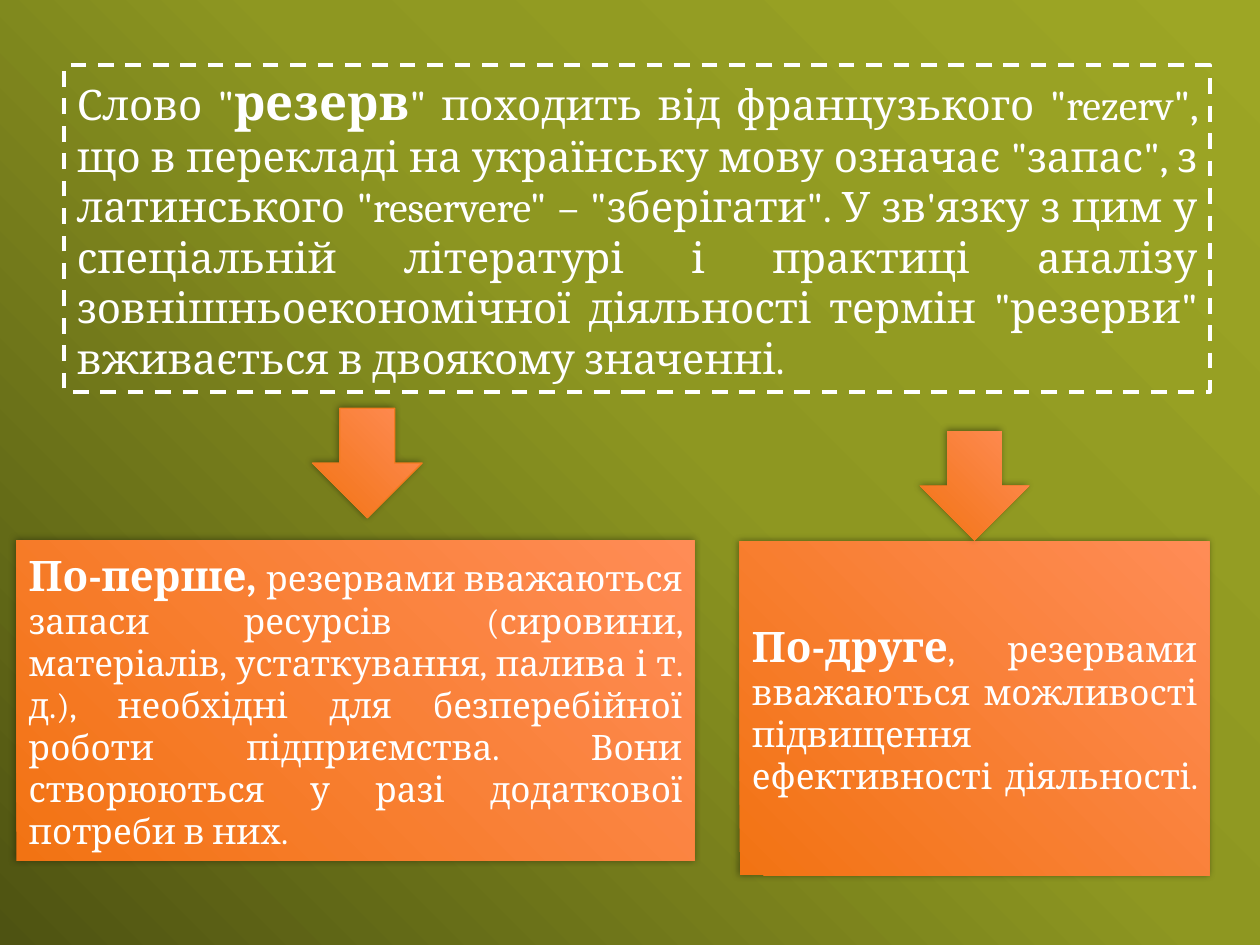
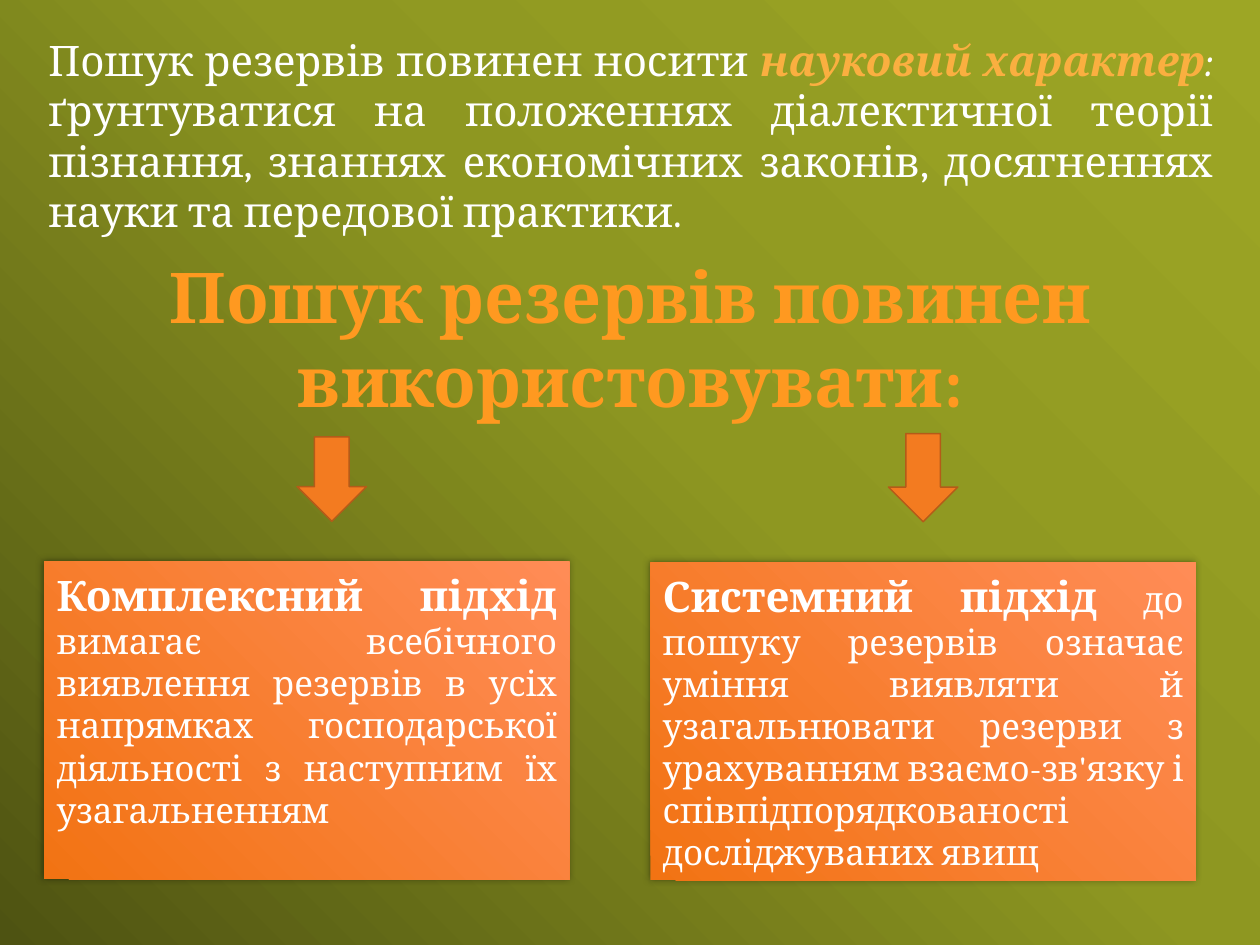
from copy import deepcopy
from lxml import etree
from pptx import Presentation
from pptx.dml.color import RGBColor
from pptx.enum import dml, lang, shapes, text
from pptx.oxml import ns
from pptx.util import Cm, Pt

WHITE = RGBColor(0xFF, 0xFF, 0xFF)
AMBER = RGBColor(0xFA, 0xAF, 0x40)
ORANGE = RGBColor(0xF3, 0x7B, 0x20)
RUST = RGBColor(0xB4, 0x5B, 0x18)
OLIVE = [(0, RGBColor(0x9D, 0xA6, 0x25)), (0.45, RGBColor(0x8E, 0x97, 0x21)),
         (1, RGBColor(0x4E, 0x53, 0x12))]
CORAL = [(0, RGBColor(0xF2, 0x73, 0x13)), (1, RGBColor(0xFF, 0x8C, 0x56))]
GOLD = [(0, RGBColor(0xFF, 0xCB, 0x9A)), (0.75, RGBColor(0xFF, 0x99, 0x20)),
        (1, RGBColor(0xE8, 0x8B, 0x00))]
KIND = shapes.MSO_SHAPE
ALIGN = text.PP_ALIGN
ANCHOR = text.MSO_ANCHOR
SHADOW = ('<a:outerShdw xmlns:a="http://schemas.openxmlformats.org/drawingml/2006/main" '
          'blurRad="50800" dist="12700" dir="13500000" rotWithShape="0">'
          '<a:srgbClr val="000000"><a:alpha val="40000"/></a:srgbClr></a:outerShdw>')


def shade(fill, angle, stops):
    """Fill with a linear gradient; the angle runs counter-clockwise."""
    fill.gradient()
    fill.gradient_angle = angle
    first = fill.gradient_stops[0]._gs
    for _ in stops[2:]:
        first.addnext(deepcopy(first))
    for stop, (place, color) in zip(fill.gradient_stops, stops):
        stop.position = place
        stop.color.rgb = color


def put(slide, kind, place, runs=(), align=ALIGN.JUSTIFY, anchor=ANCHOR.MIDDLE):
    """Add a bare shape with runs of (text, size, bold, italic, color)."""
    shape = slide.shapes.add_shape(kind, *map(Cm, place))
    shape.shadow.inherit = False
    shape.fill.background()
    shape.line.fill.background()
    frame = shape.text_frame
    frame.word_wrap = True
    frame.vertical_anchor = anchor
    para = frame.paragraphs[0]
    para.alignment = align
    for words, size, bold, italic, color in runs:
        run = para.add_run()
        run.text = words
        font = run.font
        font.name, font.size = "Cambria", Pt(size)
        font.bold, font.italic = bold, italic
        font.color.rgb = color
        font.language_id = lang.MSO_LANGUAGE_ID.UKRAINIAN
    return shape


deck = Presentation()
deck.slide_width, deck.slide_height = Cm(25.4), Cm(19.05)
pages = []
for _ in range(2):
    page = deck.slides.add_slide(deck.slide_layouts[6])
    shade(page.background.fill, 225, OLIVE)
    pages.append(page)
word, search = pages

# Orange cards: a bold lead and plain text
cards = []
for page, kind, place, lead, rest in [
    (word, KIND.RECTANGLE, (0.33, 10.9, 13.67, 6.45), "По-перше, ",
     "резервами вважаються запаси ресурсів (сировини, матеріалів, устаткування, "
     "палива і т. д.), необхідні для безперебійної роботи підприємства. Вони "
     "створюються у разі додаткової потреби в них."),
    (word, KIND.RECTANGLE, (14.91, 10.92, 9.47, 6.73), "По-друге",
     ", резервами вважаються можливості підвищення ефективності діяльності. "),
    (search, KIND.FLOWCHART_PROCESS, (0.89, 11.33, 10.59, 6.4), "Комплексний підхід ",
     "вимагає всебічного виявлення резервів в усіх напрямках господарської "
     "діяльності з наступним їх узагальненням"),
    (search, KIND.FLOWCHART_PROCESS, (13.11, 11.35, 11, 6.4), "Системний підхід",
     " до пошуку резервів означає уміння виявляти й узагальнювати резерви з "
     "урахуванням взаємо-зв'язку і співпідпорядкованості досліджуваних явищ"),
]:
    cards.append(put(page, kind, place, [(lead, 24, True, False, WHITE),
                                         (rest, 20, False, False, WHITE)]))
cards[2].text_frame.margin_bottom = Cm(0.97)

# Slide 1: arrows and the dashed definition
drops = [put(word, KIND.DOWN_ARROW, (left, top, 2.21, 2.21))
         for left, top in [(6.3, 8.23), (18.54, 8.69)]]
for shape in cards + drops:
    shade(shape.fill, 45, CORAL)
    glow = shape._element.spPr.find(ns.qn("a:effectLst"))
    glow.append(etree.fromstring(SHADOW))
drops[0].line.color.rgb = ORANGE
drops[0].line.width = Pt(0.75)

origin = put(word, KIND.RECTANGLE, (1.3, 1.32, 23.09, 6.58), [
    ('Слово "', 24, False, False, WHITE),
    ("резерв", 28, True, False, WHITE),
    ('" походить від французького "rezerv", що в перекладі на українську мову '
     'означає "запас", з латинського "reservere" – "зберігати". У зв\'язку з цим у '
     'спеціальній літературі і практиці аналізу зовнішньоекономічної діяльності '
     'термін "резерви" вживається в двоякому значенні.', 24, False, False, WHITE),
], anchor=ANCHOR.TOP)
origin.line.color.rgb = WHITE
origin.line.width = Pt(2.25)
origin.line.dash_style = dml.MSO_LINE.DASH

# Slide 2: statement, heading and arrows
put(search, KIND.ROUNDED_RECTANGLE, (0.51, 0.53, 24.41, 4.39), [
    ("Пошук резервів повинен носити ", 24, False, False, WHITE),
    ("науковий характер", 24, True, True, AMBER),
    (": ", 24, False, True, WHITE),
    ("ґрунтуватися на положеннях діалектичної теорії пізнання, знаннях економічних "
     "законів, досягненнях науки та передової практики.", 24, False, False, WHITE),
])
title = put(search, KIND.RECTANGLE, (1.9, 4.98, 21.62, 3.68),
            [("Пошук резервів повинен використовувати:", 40, True, False, AMBER)],
            ALIGN.CENTER, ANCHOR.TOP)
shade(title.text_frame.paragraphs[0].runs[0].font.fill, 270, GOLD)

for place in [(5.99, 8.81, 1.4, 1.7), (17.91, 8.74, 1.4, 1.78)]:
    arrow = put(search, KIND.DOWN_ARROW, place)
    arrow.fill.solid()
    arrow.fill.fore_color.rgb = ORANGE
    arrow.line.color.rgb = RUST
    arrow.line.width = Pt(0.85)

deck.save("out.pptx")
